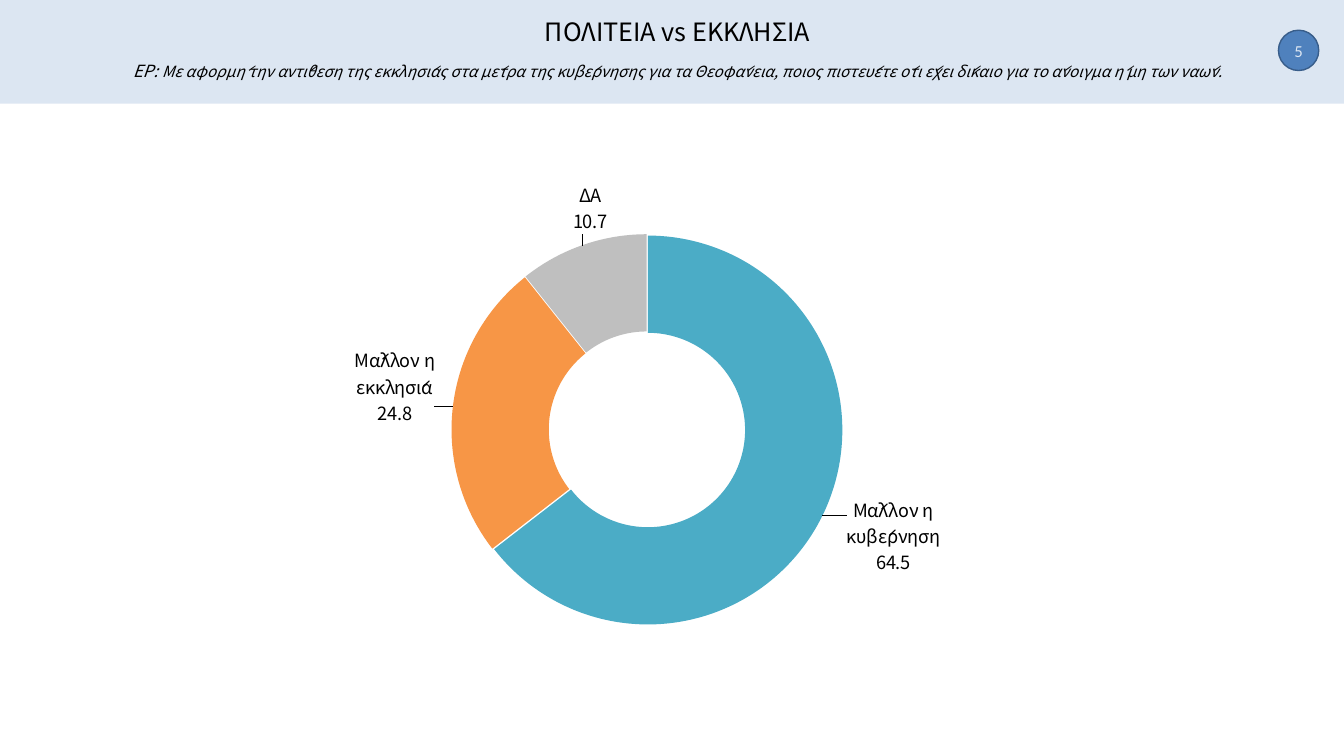
from copy import deepcopy

from lxml import etree
from pptx import Presentation
from pptx.chart.data import CategoryChartData
from pptx.dml.color import RGBColor
from pptx.enum.chart import XL_CHART_TYPE
from pptx.enum.shapes import MSO_SHAPE
from pptx.enum.text import MSO_ANCHOR, MSO_AUTO_SIZE, PP_ALIGN
from pptx.oxml import parse_xml
from pptx.oxml.ns import nsdecls, qn
from pptx.util import Inches, Pt

RECT, OVAL = MSO_SHAPE.RECTANGLE, MSO_SHAPE.OVAL
RING = XL_CHART_TYPE.DOUGHNUT
CENTER, MIDDLE = PP_ALIGN.CENTER, MSO_ANCHOR.MIDDLE
NO_FIT = MSO_AUTO_SIZE.NONE


def color(text):
    return RGBColor.from_string(text)


def layout(mode="", **sizes):
    """Make a manual chart layout from fractions of the chart."""
    parts = "".join(f'<c:{k} val="{v}"/>' for k, v in sizes.items())
    return parse_xml(f'<c:layout {nsdecls("c")}><c:manualLayout>{mode}{parts}'
                     '</c:manualLayout></c:layout>')


class Deck:
    sans, head = "Calibri", "Noto Sans CJK TC"
    black, pale, blue, navy = "000000", "DCE6F2", "4F81BD", "385D8A"

    def __init__(self):
        self.prs = Presentation()
        self.prs.slide_width, self.prs.slide_height = Inches(13.33), Inches(7.5)
        self.slide = self.prs.slides.add_slide(self.prs.slide_layouts[5])

    def font(self, font, name, size, tint):
        font.name, font.size, font.bold = name, Pt(size), False
        font.color.rgb = color(tint)

    def shape(self, kind, box, fill, line=None):
        shape = self.slide.shapes.add_shape(kind, *map(Inches, box))
        shape.shadow.inherit = False
        shape.fill.solid()
        shape.fill.fore_color.rgb = color(fill)
        if line:
            shape.line.color.rgb = color(line)
            shape.line.width = Pt(1)
        else:
            shape.line.fill.background()
        return shape

    def badge(self, box, text):
        frame = self.shape(OVAL, box, self.blue, self.navy).text_frame
        frame.margin_left = frame.margin_right = 0
        frame.margin_top = frame.margin_bottom = 0
        frame.vertical_anchor = MIDDLE
        para = frame.paragraphs[0]
        para.text, para.alignment = text, CENTER
        self.font(para.font, self.sans, 12, self.pale)

    def title(self, box, text, lead, ask):
        title = self.slide.shapes.title
        title.left, title.top, title.width, title.height = map(Inches, box)
        self.slide.shapes._spTree.append(title._element)  # above the band
        frame = title.text_frame
        frame.word_wrap, frame.auto_size = True, NO_FIT
        frame.vertical_anchor = MIDDLE
        top, sub = frame.paragraphs[0], frame.add_paragraph()
        top.text = text
        for words, size in ((lead, 12), (ask, 11)):
            run = sub.add_run()
            run.text, run.font.size = words, Pt(size)
        for para, size in ((top, 18), (sub, 12)):
            para.alignment, para.line_spacing = CENTER, 0.9
            self.font(para.font, self.head, size, self.black)
        sub.font.italic = True
        sub.space_before = Pt(11)

    def ring(self, box, rows):
        """Each row holds name, value, colour and label shift."""
        data = CategoryChartData(number_format="0.0")
        data.categories = [row[0] for row in rows]
        data.add_series("Series 1", [row[1] for row in rows])
        chart = self.slide.shapes.add_chart(RING, *map(Inches, box), data).chart
        chart.has_legend = chart.has_title = False
        self.font(chart.font, self.sans, 10, self.black)
        plot = chart.plots[0]
        plot.vary_by_categories = True
        series = plot.series[0]
        for i, row in enumerate(rows):
            fill = series.points[i].format.fill
            fill.solid()
            fill.fore_color.rgb = color(row[2])
        gap = etree.Element(qn("c:explosion"), val="1")
        series._element.find(qn("c:tx")).addnext(gap)
        self.place(chart)
        self.label(series, [row[3] for row in rows])

    def place(self, chart):
        area = chart._chartSpace.chart.plotArea
        for old in area.findall(qn("c:layout")):
            area.remove(old)
        mode = ('<c:layoutTarget val="inner"/><c:xMode val="edge"/>'
                '<c:yMode val="edge"/>')
        area.insert(0, layout(mode, x=0.257, y=0.158, w=0.478, h=0.753))

    def label(self, series, shifts):
        labels = series.data_labels
        labels.show_value = labels.show_category_name = True
        labels.show_percentage = labels.show_legend_key = False
        labels.number_format, labels.number_format_is_linked = "0.0", False
        self.font(labels.font, self.head, 13, self.black)
        root = labels._element
        split = etree.Element(qn("c:separator"))
        split.text = "\n"
        last = [e for e in root if etree.QName(e).localname.startswith("show")
                and e.tag != qn("c:showLeaderLines")][-1]
        last.addnext(split)
        shared = [e for e in root if e.tag != qn("c:showLeaderLines")]
        for i, (x, y) in enumerate(shifts):
            item = etree.Element(qn("c:dLbl"))
            etree.SubElement(item, qn("c:idx"), val=str(i))
            item.append(layout(x=x, y=y))
            item.extend(deepcopy(shared))
            root.insert(i, item)


def main():
    deck = Deck()

    # Header band, question and page number
    deck.shape(RECT, (0, 0, 13.33, 1.03), deck.pale)
    deck.badge((12.68, 0.3, 0.4, 0.4), "5")
    deck.title((0.79, 0.06, 11.86, 0.88), "ΠΟΛΙΤΕΙΑ vs ΕΚΚΛΗΣΙΑ", "ΕΡ: ",
               "Με αφορμή την αντίθεση της εκκλησίας στα μέτρα της κυβέρνησης "
               "για τα Θεοφάνεια, ποιος πιστεύετε ότι έχει δίκαιο για το "
               "άνοιγμα ή μη των ναών.")

    # Answers
    deck.ring((2.39, 1.51, 8.12, 5.15), [
        ("Μάλλον η κυβέρνηση", 64.5, "4BACC6", (0.14, 0.08)),
        ("Μάλλον η εκκλησία", 24.8, "F79646", (-0.13, -0.05)),
        ("ΔΑ", 10.7, "BFBFBF", (-0.01, -0.16)),
    ])
    deck.prs.save("out.pptx")


if __name__ == "__main__":
    main()
